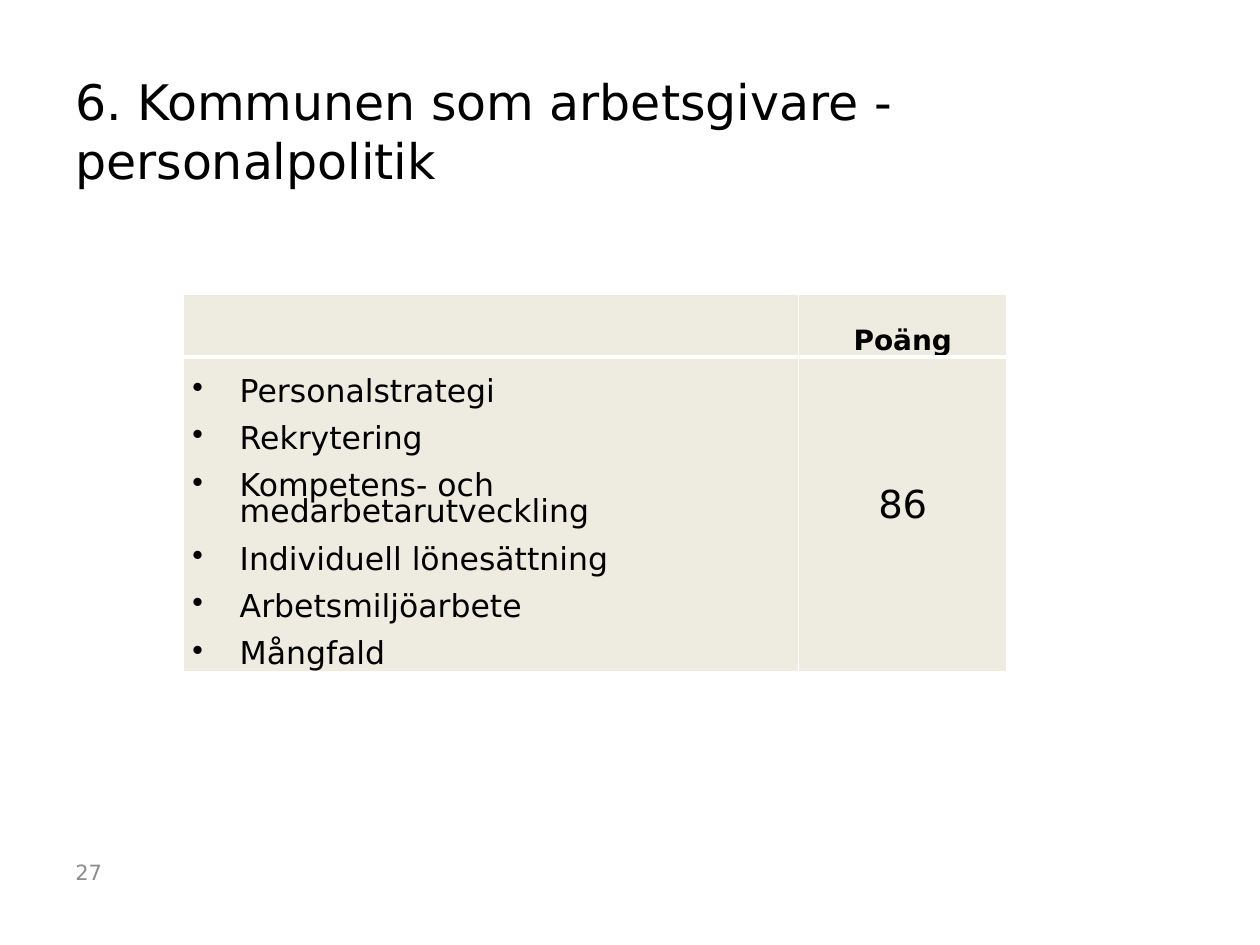
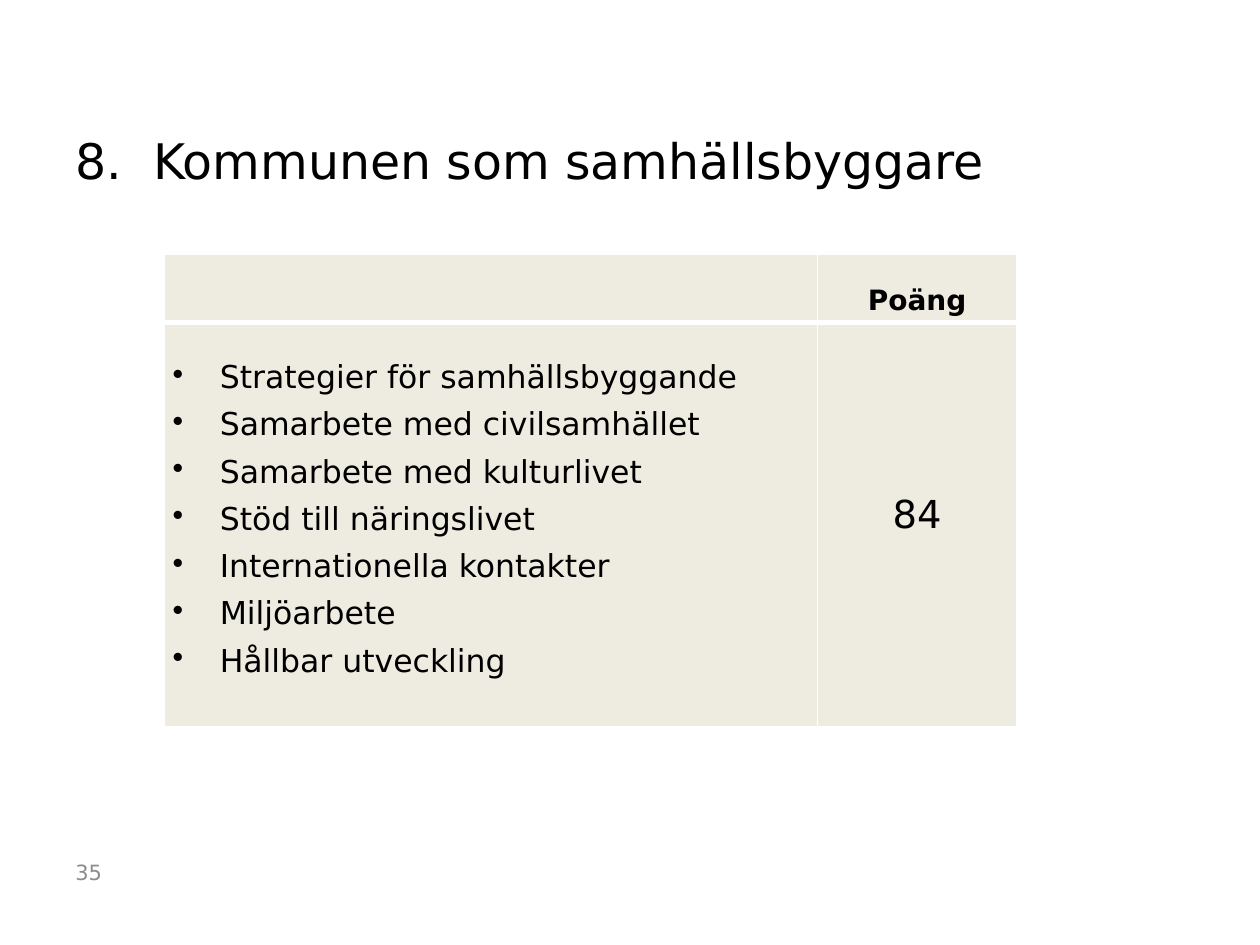
from lxml.etree import SubElement
from pptx import Presentation
from pptx.dml.color import RGBColor
from pptx.enum.text import MSO_ANCHOR, PP_ALIGN
from pptx.oxml.ns import qn
from pptx.util import Pt

FONT = "DejaVu Sans"
COLORS = {"text": "000000", "number": "8C8C8C", "cell": "EEECE1", "border": "FFFFFF"}
LEFT = 36
LINE = 15
BULLET_INDENT = 27
SIDE_INSET = 5
THIN, THICK = 1, 3


def add_run(paragraph, text, size, color="text", bold=False):
    run = paragraph.add_run()
    run.text = text
    run.font.name = FONT
    run.font.size = Pt(size)
    run.font.bold = bold
    run.font.color.rgb = RGBColor.from_string(COLORS[color])


def add_label(slide, text, top, width, height, size, color, anchor, tab=None):
    frame = slide.shapes.add_textbox(Pt(LEFT), Pt(top), Pt(width), Pt(height)).text_frame
    frame.word_wrap = True
    frame.vertical_anchor = anchor
    paragraph = frame.paragraphs[0]
    if tab:
        stops = SubElement(paragraph._p.get_or_add_pPr(), qn("a:tabLst"))
        SubElement(stops, qn("a:tab"), pos=str(Pt(tab)), algn="l")
    add_run(paragraph, text, size, color)


def add_title(slide, text, width, tab=None):
    add_label(slide, text, 21.6, width, 90, 28, "text", MSO_ANCHOR.BOTTOM, tab)


def add_number(slide, number):
    add_label(slide, str(number), 483.8, 110, 28.8, 12, "number", MSO_ANCHOR.MIDDLE)


def style_cell(cell, top_border, bottom_border, top_inset=0):
    cell.margin_left = cell.margin_right = Pt(SIDE_INSET)
    cell.margin_top, cell.margin_bottom = Pt(top_inset), Pt(0)
    properties = cell._tc.get_or_add_tcPr()
    widths = {"lnL": THIN, "lnR": THIN, "lnT": top_border, "lnB": bottom_border}
    for side, width in widths.items():
        line = SubElement(properties, qn(f"a:{side}"), w=str(Pt(width)))
        fill = SubElement(line, qn("a:solidFill"))
        SubElement(fill, qn("a:srgbClr"), val=COLORS["border"])
    cell.fill.solid()
    cell.fill.fore_color.rgb = RGBColor.from_string(COLORS["cell"])


def space_lines(paragraph, after):
    paragraph.line_spacing = Pt(LINE)
    paragraph.space_after = Pt(after)


def write_centred(cell, text, size, bold=False):
    paragraph = cell.text_frame.paragraphs[0]
    paragraph.alignment = PP_ALIGN.CENTER
    space_lines(paragraph, 6)
    add_run(paragraph, text, size, bold=bold)


def write_bullets(cell, topics):
    frame = cell.text_frame
    for index, topic in enumerate(topics):
        paragraph = frame.add_paragraph() if index else frame.paragraphs[0]
        properties = paragraph._p.get_or_add_pPr()
        properties.set("marL", str(Pt(BULLET_INDENT)))
        properties.set("indent", str(-Pt(BULLET_INDENT)))
        SubElement(properties, qn("a:buChar"), char="•")
        space_lines(paragraph, 12)
        add_run(paragraph, topic, 18)


def add_score_table(slide, left, top, columns, rows, topics, topics_inset, score):
    table = slide.shapes.add_table(
        2, 2, Pt(left), Pt(top), Pt(sum(columns)), Pt(sum(rows))
    ).table
    table.first_row = table.horz_banding = False
    for column, width in zip(table.columns, columns):
        column.width = Pt(width)
    for row, height in zip(table.rows, rows):
        row.height = Pt(height)

    corner, heading = table.rows[0].cells
    topic_cell, score_cell = table.rows[1].cells
    style_cell(corner, THIN, THICK)
    style_cell(heading, THIN, THICK, top_inset=21)
    style_cell(topic_cell, THICK, THIN, topics_inset)
    style_cell(score_cell, THICK, THIN)
    score_cell.vertical_anchor = MSO_ANCHOR.MIDDLE
    write_centred(heading, "Poäng", 16, bold=True)
    write_bullets(topic_cell, topics)
    write_centred(score_cell, str(score), 22)


def main():
    deck = Presentation()
    deck.slide_width, deck.slide_height = Pt(720), Pt(540)
    blank = deck.slide_layouts[6]

    employer = deck.slides.add_slide(blank)
    add_number(employer, 27)
    add_title(employer, "6. Kommunen som arbetsgivare - personalpolitik", 510)
    add_score_table(
        employer, 105, 168, (351.4, 119), (36, 180),
        ["Personalstrategi", "Rekrytering", "Kompetens- och medarbetarutveckling",
         "Individuell lönesättning", "Arbetsmiljöarbete", "Mångfald"],
        15, 86,
    )

    community = deck.slides.add_slide(blank)
    add_number(community, 35)
    add_title(community, "8.\tKommunen som samhällsbyggare", 648, tab=44.5)
    add_score_table(
        community, 93.6, 145.4, (373.6, 113.8), (39, 231),
        ["Strategier för samhällsbyggande", "Samarbete med civilsamhället",
         "Samarbete med kulturlivet", "Stöd till näringslivet",
         "Internationella kontakter", "Miljöarbete", "Hållbar utveckling"],
        27, 84,
    )

    deck.save("out.pptx")


if __name__ == "__main__":
    main()
